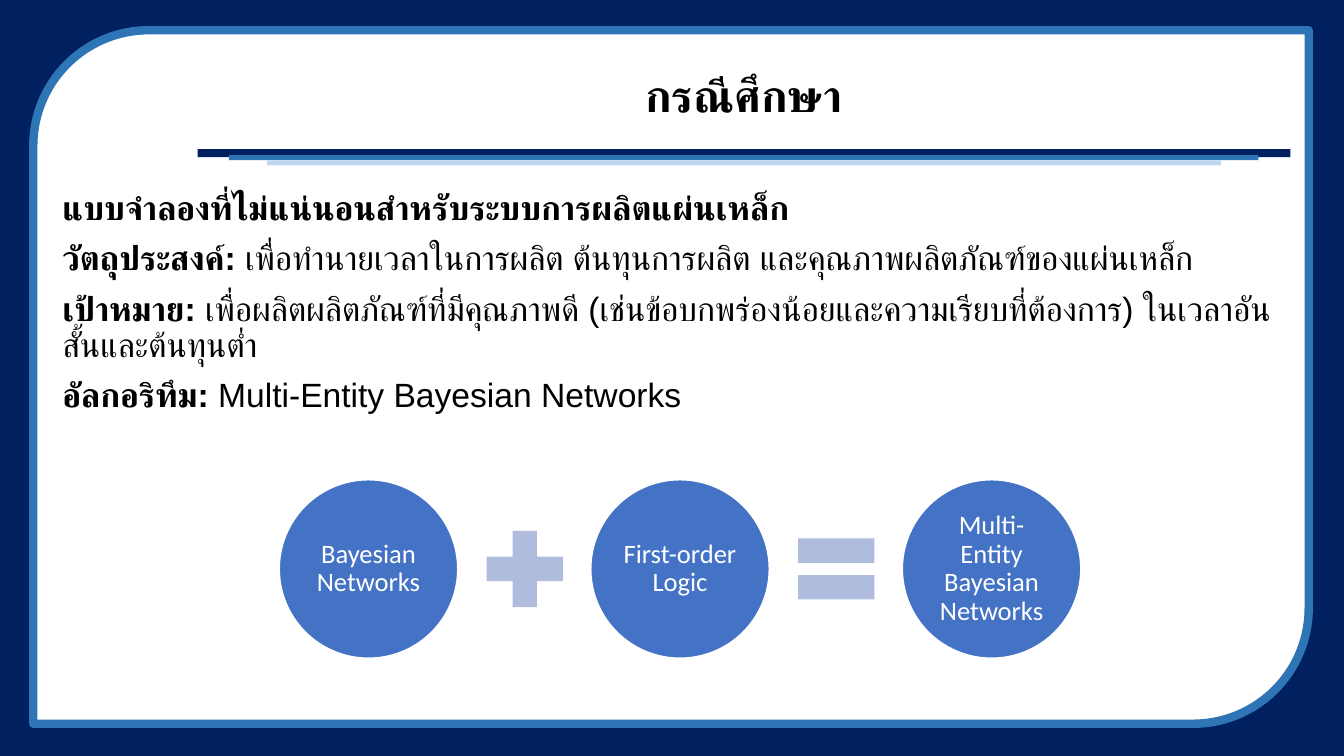
"""Build the case study slide on Multi-Entity Bayesian Networks."""
from lxml import etree
from pptx import Presentation
from pptx.dml.color import RGBColor
from pptx.enum.shapes import MSO_SHAPE as SHAPE
from pptx.enum.text import MSO_ANCHOR as ANCHOR, PP_ALIGN as ALIGN
from pptx.oxml.ns import qn
from pptx.util import Inches, Pt


def add_box(kind, x, y, w, h, fill, line=None, line_pt=1):
    sp = s.shapes.add_shape(kind, Inches(x), Inches(y), Inches(w), Inches(h))
    sp.shadow.inherit = False
    sp.fill.solid()
    sp.fill.fore_color.rgb = RGBColor.from_string(fill)
    if line:
        sp.line.color.rgb = RGBColor.from_string(line)
        sp.line.width = Pt(line_pt)
    else:
        sp.line.fill.background()
    return sp


def add_run(p, text, size, font, color, bold=False):
    p.line_spacing = 0.9
    r = p.add_run()
    r.text = text
    r.font.size = Pt(size)
    r.font.bold = bold
    r.font.color.rgb = RGBColor.from_string(color)
    r.font.name = font
    etree.SubElement(r.font._element, qn("a:cs"), typeface=font)


prs = Presentation()
prs.slide_width, prs.slide_height = Inches(13.33), Inches(7.5)
s = prs.slides.add_slide(prs.slide_layouts[5])

add_box(SHAPE.RECTANGLE, 0, 0, 13.33, 7.5, "002060")
add_box(SHAPE.ROUND_2_DIAG_RECTANGLE, 0.33, 0.3, 12.65, 6.88, "FFFFFF", "2E75B6", 6)
for x, y, w, h, fill in [
    (1.96, 1.48, 10.84, 0.08, "002060"),
    (2.27, 1.54, 10.21, 0.05, "2E75B6"),
    (2.65, 1.59, 9.46, 0.05, "BDD7EE"),
]:
    add_box(SHAPE.RECTANGLE, x, y, w, h, fill)

title = s.shapes.title
s.shapes.element.append(title.element)
title.left, title.top = Inches(1.96), Inches(0.49)
title.width, title.height = Inches(10.84), Inches(0.97)
tf = title.text_frame
tf.vertical_anchor = ANCHOR.MIDDLE
tf.paragraphs[0].alignment = ALIGN.CENTER
add_run(tf.paragraphs[0], "กรณีศึกษา", 32, "Arial", "000000", True)

body = [
    ("แบบจำลองที่ไม่แน่นอนสำหรับระบบการผลิตแผ่นเหล็ก", ""),
    ("วัตถุประสงค์: ", "เพื่อทำนายเวลาในการผลิต ต้นทุนการผลิต และคุณภาพผลิตภัณฑ์ของแผ่นเหล็ก"),
    ("เป้าหมาย: ", "เพื่อผลิตผลิตภัณฑ์ที่มีคุณภาพดี (เช่นข้อบกพร่องน้อยและความเรียบที่ต้องการ) "
                  "ในเวลาอันสั้นและต้นทุนต่ำ"),
    ("อัลกอริทึม: ", "Multi-Entity Bayesian Networks"),
]
tf = s.shapes.add_textbox(Inches(0.52), Inches(1.85), Inches(12.28), Inches(4.71)).text_frame
tf.word_wrap = True
for i, (label, detail) in enumerate(body):
    p = tf.add_paragraph() if i else tf.paragraphs[0]
    p.space_before = Pt(10 if i else 0)
    add_run(p, label, 24, "Arial", "000000", True)
    if detail:
        add_run(p, detail, 24, "Arial", "000000")

terms = [
    ("Bayesian Networks", SHAPE.MATH_PLUS),
    ("First-order Logic", SHAPE.MATH_EQUAL),
    ("Multi-Entity Bayesian Networks", None),
]
for i, (term, sign) in enumerate(terms):
    x = 2.77 + 3.09 * i
    sp = add_box(SHAPE.OVAL, x, 4.76, 1.77, 1.77, "4472C4", "FFFFFF")
    tf = sp.text_frame
    tf.word_wrap = True
    tf.vertical_anchor = ANCHOR.MIDDLE
    tf.margin_left = tf.margin_right = tf.margin_top = tf.margin_bottom = Inches(0.03)
    tf.paragraphs[0].alignment = ALIGN.CENTER
    add_run(tf.paragraphs[0], term, 19, "Calibri", "FFFFFF")
    if sign:
        add_box(sign, x + 1.92, 5.13, 1.03, 1.03, "B0BCDE")

prs.save("out.pptx")
